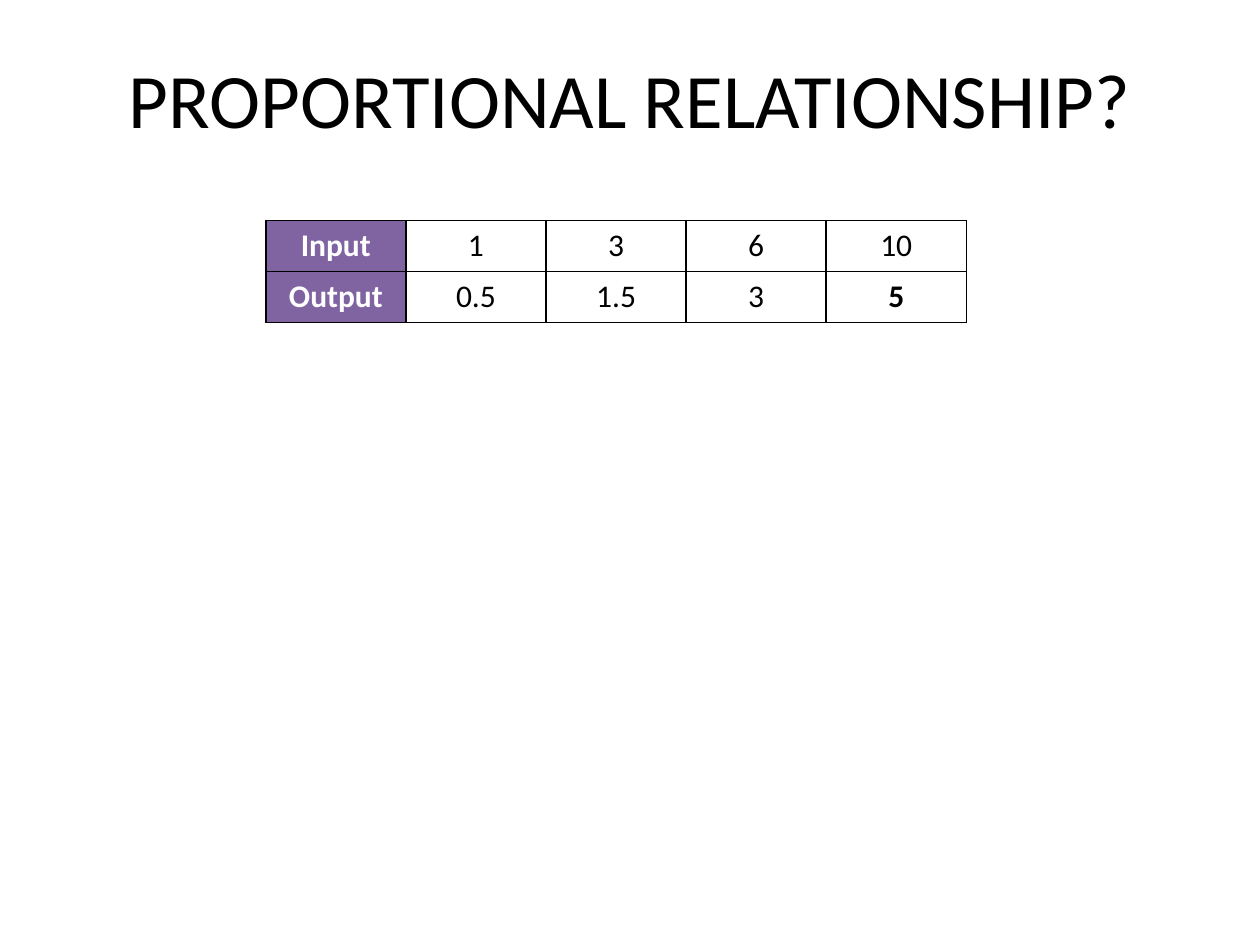
from lxml import etree
from pptx import Presentation
from pptx.dml.color import RGBColor
from pptx.enum.text import MSO_ANCHOR, PP_ALIGN
from pptx.oxml.ns import qn
from pptx.util import Inches, Pt

MIDDLE = MSO_ANCHOR.MIDDLE
CENTER = PP_ALIGN.CENTER

COLORS = {"ink": "000000", "paper": "FFFFFF", "head": "8064A2"}
TITLE = {"name": "Calibri", "size": Pt(44), "bold": False}
BODY = {"name": "Calibri", "size": Pt(18), "bold": False}
STRONG = {**BODY, "bold": True}

ROWS = [
    ["Input", "1", "3", "6", "10"],
    ["Output", "0.5", "1.5", "3", "5"],
]
ANSWER = (1, 4)


def color(key):
    return RGBColor.from_string(COLORS[key])


def write(frame, text, style, ink):
    frame.text = text
    para = frame.paragraphs[0]
    para.alignment = CENTER
    font = para.runs[0].font
    for name, value in style.items():
        setattr(font, name, value)
    font.color.rgb = color(ink)


def frame_cell(cell):
    """Draw a one-point line on all four sides, ahead of the fill."""
    props = cell._tc.get_or_add_tcPr()
    for spot, side in enumerate(("lnL", "lnR", "lnT", "lnB")):
        line = etree.Element(qn(f"a:{side}"), w=str(Pt(1)))
        fill = etree.SubElement(line, qn("a:solidFill"))
        etree.SubElement(fill, qn("a:srgbClr"), val=COLORS["ink"])
        props.insert(spot, line)


def add_title(slide, left, top, width, height):
    title = slide.shapes.title
    title.left, title.top = Inches(left), Inches(top)
    title.width, title.height = Inches(width), Inches(height)
    title.text_frame.vertical_anchor = MIDDLE
    write(title.text_frame, "PROPORTIONAL RELATIONSHIP?", TITLE, "ink")


def add_grid(slide, left, top, width, height):
    box = [Inches(n) for n in (left, top, width, height)]
    table = slide.shapes.add_table(len(ROWS), len(ROWS[0]), *box).table
    for r, row in enumerate(ROWS):
        for c, text in enumerate(row):
            cell = table.cell(r, c)
            head = c == 0
            cell.vertical_anchor = MIDDLE
            cell.fill.solid()
            cell.fill.fore_color.rgb = color("head" if head else "paper")
            style = STRONG if head or (r, c) == ANSWER else BODY
            write(cell.text_frame, text, style, "paper" if head else "ink")
            frame_cell(cell)


def main():
    deck = Presentation()
    deck.slide_width, deck.slide_height = Inches(10), Inches(7.5)
    # Title-only layout
    slide = deck.slides.add_slide(deck.slide_layouts[5])
    add_title(slide, 0.5, 0.3, 9, 0.95)
    # Input and output values
    add_grid(slide, 2.11, 1.75, 5.56, 0.81)
    deck.save("out.pptx")


if __name__ == "__main__":
    main()
